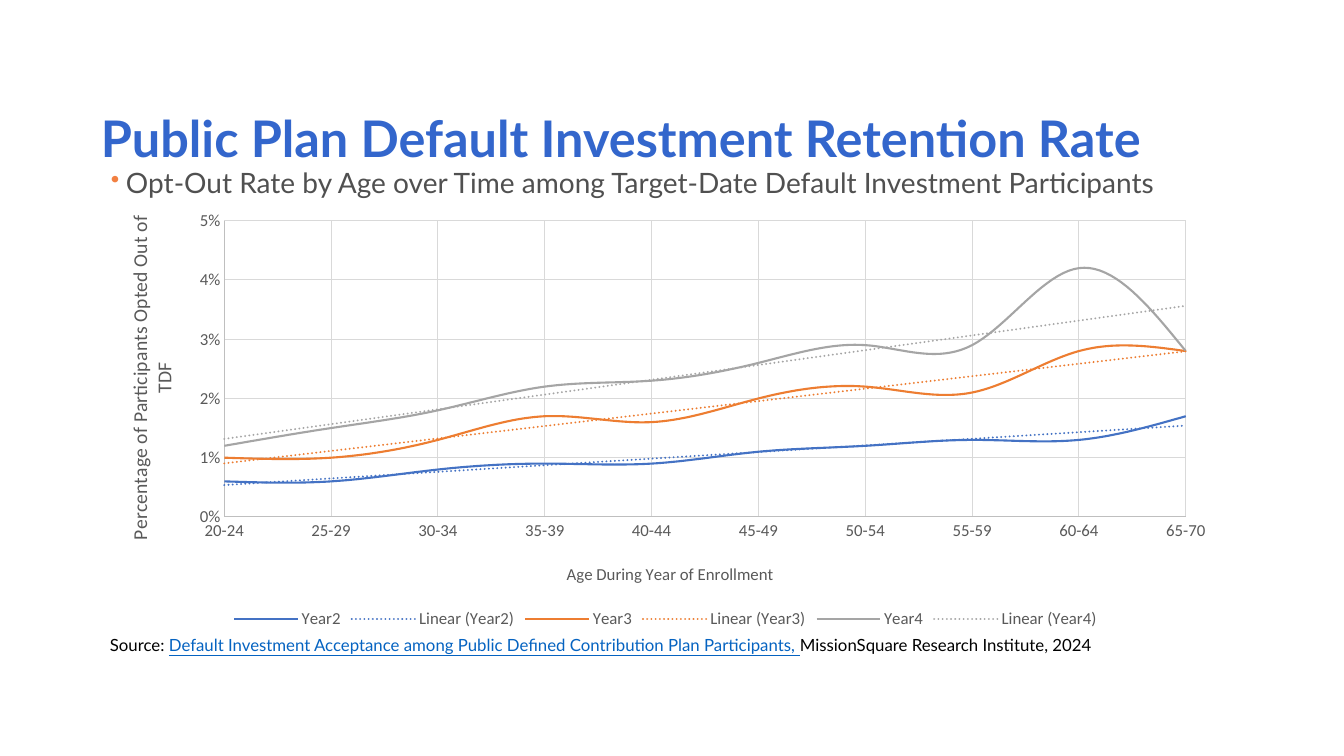
from lxml import etree
from pptx import Presentation
from pptx.chart.data import CategoryChartData
from pptx.dml.color import RGBColor
from pptx.enum import chart as kinds, text
from pptx.oxml import parse_xml
from pptx.oxml.ns import nsdecls, qn
from pptx.util import Inches, Pt

COLORS = {
    "title": "3366CC", "body": "505050", "bullet": "F28041",
    "black": "000000", "link": "0563C1", "label": "595959",
    "axis": "BFBFBF", "grid": "D9D9D9",
    "Year2": "4472C4", "Year3": "ED7D31", "Year4": "A5A5A5",
}
AGES = ["20-24", "25-29", "30-34", "35-39", "40-44",
        "45-49", "50-54", "55-59", "60-64", "65-70"]
OPT_OUT_RATES = {
    "Year2": [0.006, 0.006, 0.008, 0.009, 0.009, 0.011, 0.012, 0.013, 0.013, 0.017],
    "Year3": [0.01, 0.01, 0.013, 0.017, 0.016, 0.02, 0.022, 0.021, 0.028, 0.028],
    "Year4": [0.012, 0.015, 0.018, 0.022, 0.023, 0.026, 0.029, 0.029, 0.042, 0.028],
}


class SlideBuilder:
    text_font = "Lato"
    chart_font = "Calibri"

    def __init__(self, page):
        self.page = page

    def color(self, name):
        return RGBColor.from_string(COLORS[name])

    def style(self, font, name, size, color, bold=False):
        font.name, font.size, font.bold = name, Pt(size), bold
        font.color.rgb = self.color(color)

    def line(self, line, color, width=0.75):
        line.color.rgb = self.color(color)
        line.width = Pt(width)

    def text_box(self, area, spans, size, color, spacing, bold=False,
                 indent=None, bullet=None, anchor=text.MSO_ANCHOR.TOP):
        """Add one paragraph; spans are (words, color or None) pairs."""
        box = self.page.shapes.add_textbox(*map(Inches, area))
        frame = box.text_frame
        frame.word_wrap = True
        frame.vertical_anchor = anchor
        frame.margin_left = frame.margin_right = 0
        frame.margin_top = frame.margin_bottom = 0
        para = frame.paragraphs[0]
        para.line_spacing = spacing
        properties = para._p.get_or_add_pPr()
        if indent:
            properties.set("marL", str(Inches(indent[0])))
            properties.set("indent", str(Inches(indent[1])))
        if bullet:
            bullet_color = etree.SubElement(properties, qn("a:buClr"))
            etree.SubElement(bullet_color, qn("a:srgbClr")).set("val", COLORS["bullet"])
            etree.SubElement(properties, qn("a:buSzPct")).set("val", "90000")
            etree.SubElement(properties, qn("a:buChar")).set("char", bullet)
        self.style(para.font, self.text_font, size, color, bold)
        for words, span_color in spans:
            span = para.add_run()
            span.text = words
            if span_color:
                span.font.color.rgb = self.color(span_color)
                span.font.underline = True

    def layout(self, parent, x, y, width=None, height=None):
        """Place a chart part by fractions of the chart area."""
        node = parent.find(qn("c:layout"))
        if node is None:
            node = etree.Element(qn("c:layout"))
            after_text = parent.find(qn("c:tx"))
            if after_text is None:
                parent.insert(0, node)
            else:
                after_text.addnext(node)
        for child in list(node):
            node.remove(child)
        manual = etree.SubElement(node, qn("c:manualLayout"))
        settings = [("xMode", "edge"), ("yMode", "edge"), ("x", x), ("y", y)]
        if width:
            settings.insert(0, ("layoutTarget", "inner"))
            settings += [("w", width), ("h", height)]
        for tag, value in settings:
            etree.SubElement(manual, qn(f"c:{tag}")).set("val", str(value))

    def axis(self, axis, title, title_size, place):
        axis.has_major_gridlines = True
        self.line(axis.major_gridlines.format.line, "grid")
        self.line(axis.format.line, "axis")
        axis.major_tick_mark = axis.minor_tick_mark = kinds.XL_TICK_MARK.NONE
        self.style(axis.tick_labels.font, self.chart_font, 12, "label")
        frame = axis.axis_title.text_frame
        frame.text = title
        self.style(frame.paragraphs[0].font, self.chart_font, title_size, "label")
        self.layout(axis.axis_title._element, *place)

    def trend(self, series, color):
        series._element.find(qn("c:cat")).addprevious(parse_xml(
            f'<c:trendline {nsdecls("c", "a")}><c:spPr>'
            f'<a:ln w="{Pt(1.5)}" cap="rnd"><a:solidFill>'
            f'<a:srgbClr val="{COLORS[color]}"/></a:solidFill>'
            '<a:prstDash val="sysDot"/></a:ln></c:spPr>'
            '<c:trendlineType val="linear"/><c:dispRSqr val="0"/>'
            '<c:dispEq val="0"/></c:trendline>'))

    def line_chart(self, area, categories, values):
        data = CategoryChartData(number_format="0%")
        data.categories = categories
        for name, rates in values.items():
            data.add_series(name, rates)
        chart = self.page.shapes.add_chart(
            kinds.XL_CHART_TYPE.LINE, *map(Inches, area), data).chart
        chart.has_title = False
        self.style(chart.font, self.chart_font, 12, "black")
        chart.plots[0].vary_by_categories = False

        # Series and trend lines
        for series in chart.plots[0].series:
            series.smooth = True
            series.marker.style = kinds.XL_MARKER_STYLE.NONE
            self.line(series.format.line, series.name, 1.5)
            self.trend(series, series.name)

        # Axes
        self.axis(chart.category_axis, "Age During Year of Enrollment", 12,
                  (0.41, 0.83))
        rate_axis = chart.value_axis
        self.axis(rate_axis, "Percentage of Participants Opted Out of TDF", 14,
                  (0.02, 0.02))
        rate_axis.minimum_scale, rate_axis.maximum_scale = 0, 0.05
        rate_axis.major_unit = 0.01
        rate_axis.tick_labels.number_format = "0%"
        rate_axis.tick_labels.number_format_is_linked = False
        rate_axis._element.find(qn("c:majorUnit")).addprevious(
            parse_xml(f'<c:crossBetween {nsdecls("c")} val="midCat"/>'))
        body = rate_axis.axis_title.text_frame._txBody.find(qn("a:bodyPr"))
        body.set("rot", "-5400000")
        body.set("vert", "horz")
        self.layout(chart._chartSpace.chart.plotArea, 0.11, 0.04, 0.85, 0.69)

        # Legend
        chart.has_legend = True
        chart.legend.position = kinds.XL_LEGEND_POSITION.BOTTOM
        chart.legend.include_in_layout = False
        self.style(chart.legend.font, self.chart_font, 12, "label")


def main():
    deck = Presentation()
    deck.slide_width, deck.slide_height = Inches(13.33), Inches(7.5)
    slide = SlideBuilder(deck.slides.add_slide(deck.slide_layouts[6]))

    # Heading
    slide.text_box((1, 1, 11.15, 0.61),
                   [("Public Plan Default Investment Retention Rate", None)],
                   36, "title", 1.1, bold=True)
    slide.text_box((1, 1.61, 11.16, 0.48),
                   [("Opt-Out Rate by Age over Time among Target-Date "
                     "Default Investment Participants", None)],
                   20, "body", 1.1, indent=(0.25, -0.15), bullet="•")

    # Opt-out rates
    slide.line_chart((0.99, 2.02, 11.22, 4.26), AGES, OPT_OUT_RATES)

    # Source
    slide.text_box((0.99, 6.14, 10.45, 0.36),
                   [("Source: ", None),
                    ("Default Investment Acceptance among Public Defined "
                     "Contribution Plan Participants, ", "link"),
                    ("MissionSquare Research Institute, 2024", None)],
                   12, "black", 0.9, indent=(0.1, 0),
                   anchor=text.MSO_ANCHOR.BOTTOM)

    deck.save("out.pptx")


if __name__ == "__main__":
    main()
